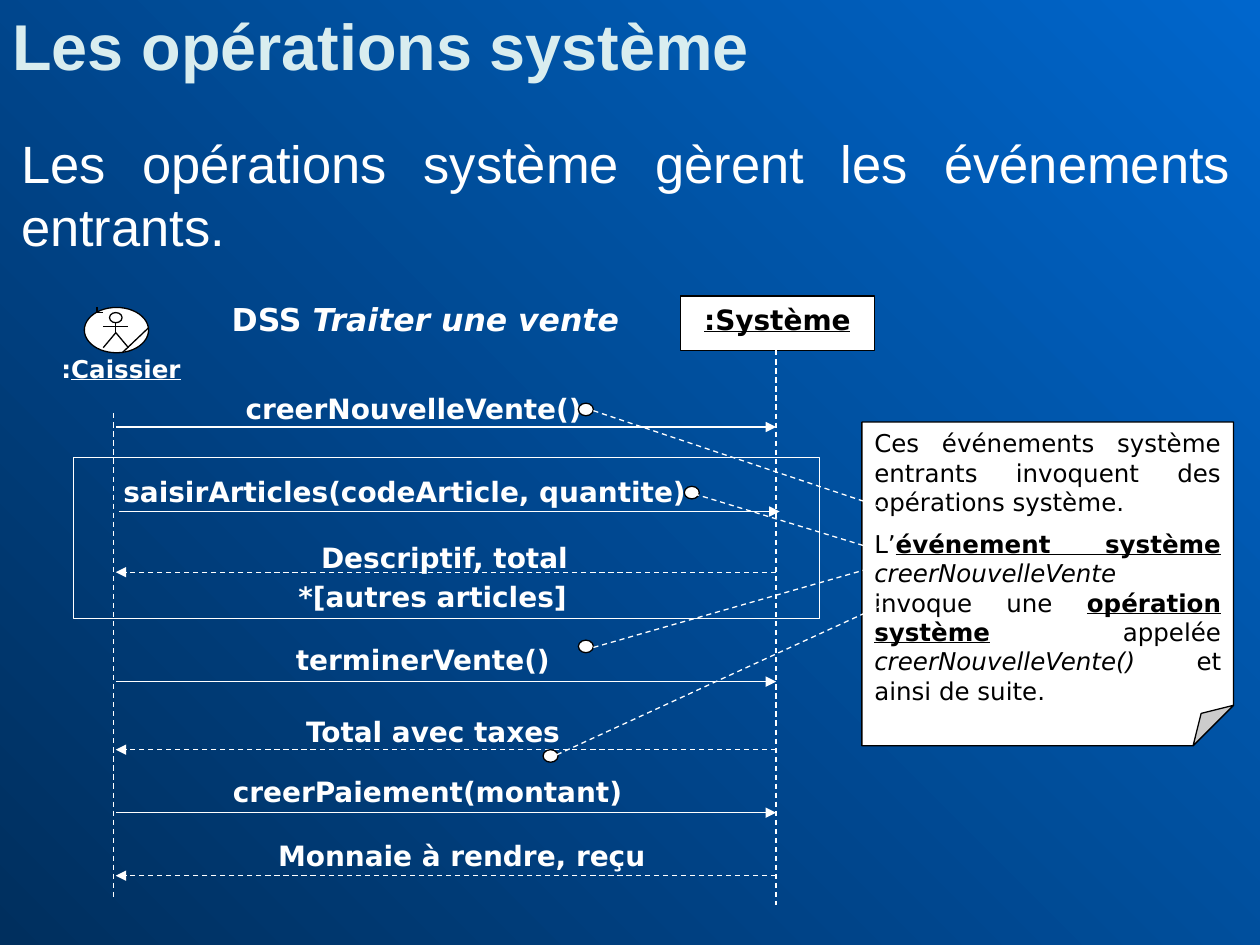
from dataclasses import dataclass
from lxml import etree
from pptx import Presentation
from pptx.dml.color import RGBColor
from pptx.enum.dml import MSO_LINE
from pptx.enum.shapes import MSO_CONNECTOR, MSO_SHAPE
from pptx.enum.text import MSO_ANCHOR, PP_ALIGN
from pptx.oxml.ns import qn
from pptx.util import Pt

RECT, OVAL, NOTE = MSO_SHAPE.RECTANGLE, MSO_SHAPE.OVAL, MSO_SHAPE.FOLDED_CORNER
STRAIGHT, DASH = MSO_CONNECTOR.STRAIGHT, MSO_LINE.DASH
LEFT, CENTER, JUSTIFY = PP_ALIGN.LEFT, PP_ALIGN.CENTER, PP_ALIGN.JUSTIFY
TOP = MSO_ANCHOR.TOP


@dataclass(frozen=True)
class Theme:
    deep: str = "002F5E"
    bright: str = "0066CC"
    title: str = "D9EDEF"
    white: str = "FFFFFF"
    black: str = "000000"
    heading_font: str = "Arial"
    diagram_font: str = "DejaVu Sans"
    title_size: int = 37
    body_size: int = 30
    caption_size: int = 18
    label_size: int = 16
    small_size: int = 14
    line: float = 0.75


THEME = Theme()

# Content: paragraphs are lists of (text, style), style letters b, i, u
TITLE = [[("Les opérations système", "b")]]
BODY = [[("Les opérations système gèrent les événements entrants.", "")]]
CAPTION = [[("DSS ", "b"), ("Traiter une vente", "bi")]]
ACTOR = [[(":", "b"), ("Caissier", "bu")]]
SYSTEM = [[(":Système", "bu")]]
NOTE_TEXT = [
    [("Ces événements système entrants invoquent des opérations système.", "")],
    [("L’", ""), ("événement système ", "bu"), ("creerNouvelleVente", "i"),
     (" invoque une ", ""), ("opération système", "bu"), (" appelée ", ""),
     ("creerNouvelleVente() ", "i"), ("et ainsi de suite.", "")],
]

# Labels: text, left, top, width
LABELS = [
    ("creerNouvelleVente()", 133.2, 220.3, 228),
    ("saisirArticles(codeArticle, quantite)", 63.4, 267.8, 354),
    ("Descriptif, total", 176.4, 305.3, 198),
    ("*[autres articles]", 163.4, 327.6, 187),
    ("terminerVente()", 162, 363.6, 186),
    ("Total avec taxes", 167.8, 404.6, 164),
    ("creerPaiement(montant)", 126, 439.2, 260),
    ("Monnaie à rendre, reçu", 151.9, 475.9, 230),
]
# Messages: height, is a reply, shift to the right
MESSAGES = [(244, False, 0), (292.3, False, 2), (327, True, 0), (389.5, False, 0),
            (428.4, True, 0), (464.4, False, 0), (500.4, True, 0)]
MESSAGE_LEFT, MESSAGE_RIGHT = 66.2, 443.5
LIFELINES = [(64.8, 236.2, 514), (443.5, 200.2, 517)]

# Callouts: dot corner, link start, link end
CALLOUTS = [
    ((330.5, 230.4), (339.1, 234.7), (509, 291.6)),
    ((391, 277.9), (396.7, 282.2), (500.4, 313.9)),
    ((330.5, 365.8), (339.1, 370), (507.6, 321.8)),
    ((310.3, 428.4), (318.2, 431.3), (507.6, 344.2)),
]
DOT = (8.6, 7.2)

# Actor icon
ICON_OVALS = [(48.2, 175.7, 36.7, 25.9), (62.6, 178.6, 7.2, 5.8)]
ICON_STROKES = [
    ((66.2, 184.3), (66.2, 190.1)), ((66.2, 190.1), (59, 198.7)),
    ((66.2, 190.1), (73.4, 198.7)), ((59, 186.5), (73.4, 186.5)),
    ((85, 187.2), (69.8, 201.6)), ((55.4, 178.6), (55.4, 175.7)),
    ((55.4, 178.6), (59, 178.6)),
]


def rgb(color):
    return RGBColor.from_string(color)


def write(holder, paragraphs, size, color=THEME.white, font=THEME.diagram_font,
          align=LEFT, gap=0):
    frame = holder.text_frame
    frame.word_wrap = True
    frame.vertical_anchor = TOP
    frame.margin_left = frame.margin_right = Pt(7.2)
    frame.margin_top = frame.margin_bottom = Pt(3.6)
    for index, runs in enumerate(paragraphs):
        paragraph = frame.add_paragraph() if index else frame.paragraphs[0]
        paragraph.alignment = align
        paragraph.space_before = Pt(gap if index else 0)
        for text, style in runs:
            run = paragraph.add_run()
            run.text = text
            run.font.name, run.font.size = font, Pt(size)
            run.font.color.rgb = rgb(color)
            run.font.bold, run.font.italic = "b" in style, "i" in style
            run.font.underline = "u" in style


def add_text(shapes, box, paragraphs, size, **options):
    write(shapes.add_textbox(*map(Pt, box)), paragraphs, size, **options)


def add_box(shapes, kind, box, fill=THEME.white, line=THEME.black):
    shape = shapes.add_shape(kind, *map(Pt, box))
    shape.shadow.inherit = False
    if fill:
        shape.fill.solid()
        shape.fill.fore_color.rgb = rgb(fill)
    else:
        shape.fill.background()
    shape.line.color.rgb = rgb(line)
    shape.line.width = Pt(THEME.line)
    return shape


def add_line(shapes, start, end, color=THEME.white, dashed=False, arrow=False):
    line = shapes.add_connector(STRAIGHT, *map(Pt, start + end))
    line.line.color.rgb = rgb(color)
    line.line.width = Pt(THEME.line)
    if dashed:
        line.line.dash_style = DASH
    properties = line._element.spPr
    if arrow:
        etree.SubElement(properties.find(qn("a:ln")), qn("a:tailEnd"), type="triangle")
    etree.SubElement(properties, qn("a:effectLst"))


def main():
    deck = Presentation()
    deck.slide_width, deck.slide_height = Pt(720), Pt(540)
    slide = deck.slides.add_slide(deck.slide_layouts[6])
    shapes = slide.shapes

    # Background, dark bottom left to bright top right
    background = slide.background.fill
    background.gradient()
    background.gradient_angle = 45
    for stop, color, position in zip(background.gradient_stops,
                                     (THEME.deep, THEME.bright), (0, 1)):
        stop.color.rgb = rgb(color)
        stop.position = position

    # Headings
    add_text(shapes, (0, 0, 720, 52), TITLE, THEME.title_size,
             color=THEME.title, font=THEME.heading_font)
    add_text(shapes, (5, 71.3, 705.6, 91.4), BODY, THEME.body_size,
             font=THEME.heading_font, align=JUSTIFY)
    add_text(shapes, (125.3, 167.8, 252, 29), CAPTION, THEME.caption_size)

    # Participants and loop frame
    add_text(shapes, (28, 198.7, 85, 31), ACTOR, THEME.small_size)
    add_box(shapes, RECT, (42, 261.4, 426.2, 92.2), fill=None, line=THEME.white)
    system = add_box(shapes, RECT, (388.8, 169.2, 110.9, 31))
    write(system, SYSTEM, THEME.label_size, color=THEME.black, align=CENTER)
    icon = shapes.add_group_shape().shapes
    for oval in ICON_OVALS:
        add_box(icon, OVAL, oval)
    for start, end in ICON_STROKES:
        add_line(icon, start, end, color=THEME.black)

    # Lifelines, messages and labels
    for x, top, bottom in LIFELINES:
        add_line(shapes, (x, top), (x, bottom), dashed=True)
    for y, reply, shift in MESSAGES:
        ends = [(MESSAGE_LEFT + shift, y), (MESSAGE_RIGHT + shift, y)]
        start, end = reversed(ends) if reply else ends
        add_line(shapes, start, end, dashed=reply, arrow=True)
    for text, left, top, width in LABELS:
        add_text(shapes, (left, top, width, 31), [[(text, "b")]], THEME.label_size)

    # Note, with a fold of one eighth, and its callouts
    note = add_box(shapes, NOTE, (492.5, 241.2, 212.4, 185))
    guides = note._element.spPr.find(qn("a:prstGeom")).find(qn("a:avLst"))
    etree.SubElement(guides, qn("a:gd"), name="adj", fmla="val 12500")
    write(note, NOTE_TEXT, THEME.small_size, color=THEME.black, align=JUSTIFY, gap=7)
    for corner, start, end in CALLOUTS:
        add_box(shapes, OVAL, corner + DOT)
        add_line(shapes, start, end, dashed=True)

    deck.save("out.pptx")


if __name__ == "__main__":
    main()
